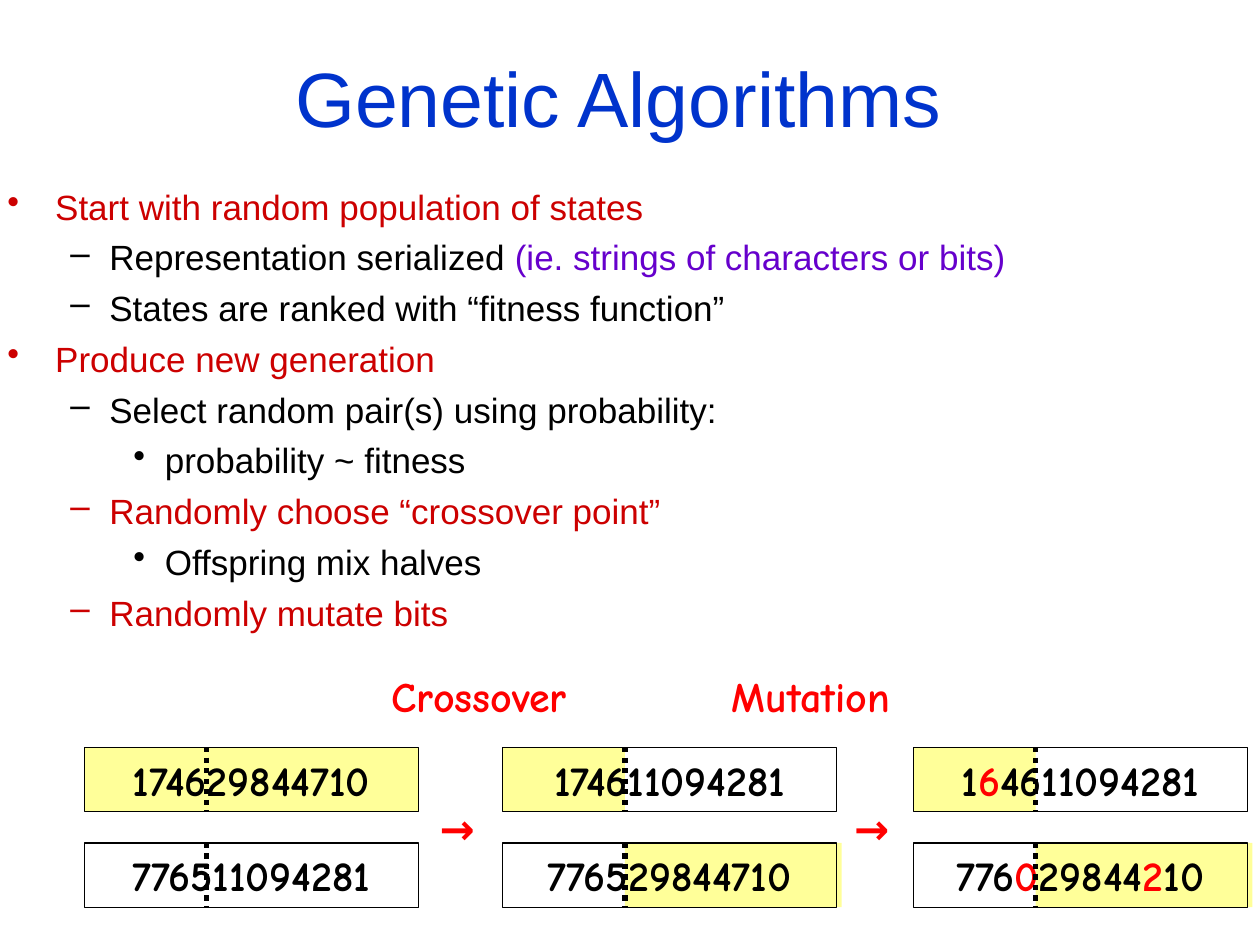
from dataclasses import dataclass
from lxml.etree import SubElement
from pptx import Presentation
from pptx.dml.color import RGBColor
from pptx.enum.dml import MSO_LINE
from pptx.enum.shapes import MSO_CONNECTOR, MSO_SHAPE
from pptx.enum.text import MSO_ANCHOR, PP_ALIGN
from pptx.oxml import parse_xml
from pptx.oxml.ns import nsdecls, qn
from pptx.util import Inches, Pt

BLACK, RED, CRIMSON = "000000", "FF0000", "CC0000"
BLUE, PURPLE, YELLOW = "0033CC", "6600CC", "FFFF99"
COLS = (0.67, 3.99, 7.25)
ROWS = (5.93, 6.69)
WIDE, HIGH, CUT, TAIL = 2.65, 0.51, 0.97, 1.72
LEVELS = ((0.38, -0.38, "•"), (0.81, -0.31, "–"), (1.25, -0.25, "•"))


@dataclass
class Style:
    """Look of a paragraph; parts split by | alternate color and accent."""
    size: int
    face: str
    color: str
    accent: str = RED
    bold: bool = False


@dataclass
class Point:
    """One line of the bullet list."""
    level: int
    text: str
    color: str = BLACK


@dataclass
class Gene:
    """One serialized state at a grid cell, with its yellow span."""
    col: int
    row: int
    text: str
    start: float = 0
    span: float = 0


@dataclass
class Label:
    """A red caption or arrow at a place."""
    left: float
    top: float
    width: float
    text: str


POINTS = (
    Point(0, "Start with random population of states", CRIMSON),
    Point(1, "Representation serialized |(ie. strings of characters or bits)"),
    Point(1, "States are ranked with “fitness function”"),
    Point(0, "Produce new generation", CRIMSON),
    Point(1, "Select random pair(s) using probability:"),
    Point(2, "probability ~ fitness"),
    Point(1, "Randomly choose “crossover point”", CRIMSON),
    Point(2, "Offspring mix halves"),
    Point(1, "Randomly mutate bits", CRIMSON),
)
GENES = (
    Gene(0, 0, "174629844710", 0, WIDE),
    Gene(0, 1, "776511094281"),
    Gene(1, 0, "174611094281", 0, CUT),
    Gene(1, 1, "776529844710", CUT, TAIL),
    Gene(2, 0, "1|6|4611094281", 0, CUT),
    Gene(2, 1, "776|0|29844|2|10", CUT, TAIL),
)
LABELS = (
    Label(3.01, 5.27, 1.6, "Crossover"),
    Label(5.71, 5.27, 1.5, "Mutation"),
    Label(3.39, 6.32, 0.53, "→"),
    Label(6.68, 6.32, 0.53, "→"),
)


def paint(target, color: str) -> None:
    """Set a font, fill or line color from a hex string."""
    target.rgb = RGBColor.from_string(color)


def write(para, text: str, style: Style) -> None:
    """Fill a paragraph with styled text."""
    font = para.font
    font.size, font.name, font.bold = Pt(style.size), style.face, style.bold
    parts = text.split("|")
    if len(parts) == 1:
        paint(font.color, style.color)
    for num, part in enumerate(parts):
        run = para.add_run()
        run.text = part
        if len(parts) > 1:
            paint(run.font.color, style.accent if num % 2 else style.color)


def add_box(slide, left: float, top: float, width: float, high: float):
    """Add a text box and return its frame."""
    box = slide.shapes.add_textbox(*map(Inches, (left, top, width, high)))
    return box.text_frame


def add_rect(slide, left: float, top: float, width: float):
    """Add a plain rectangle of gene height."""
    rect = slide.shapes.add_shape(
        MSO_SHAPE.RECTANGLE, *map(Inches, (left, top, width, HIGH)))
    rect.shadow.inherit = False
    return rect


def add_cut(slide, left: float, top: float) -> None:
    """Draw the dotted crossover point."""
    line = slide.shapes.add_connector(
        MSO_CONNECTOR.STRAIGHT, *map(Inches, (left, top, left, top + HIGH)))
    paint(line.line.color, BLACK)
    line.line.width = Pt(3)
    line.line.dash_style = MSO_LINE.ROUND_DOT
    SubElement(line._element.spPr, qn("a:effectLst"))


def add_gene(slide, gene: Gene) -> None:
    """Draw a gene with its yellow span, frame, digits and cut."""
    left, top = COLS[gene.col], ROWS[gene.row]
    if gene.span:
        band = add_rect(slide, left + gene.start, top, gene.span)
        band.fill.solid()
        paint(band.fill.fore_color, YELLOW)
        band.line.fill.background()
    rect = add_rect(slide, left, top, WIDE)
    rect.fill.background()
    paint(rect.line.color, BLACK)
    rect.line.width = Pt(0.75)
    frame = rect.text_frame
    frame.word_wrap = False
    frame.vertical_anchor = MSO_ANCHOR.MIDDLE
    para = frame.paragraphs[0]
    para.alignment = PP_ALIGN.CENTER
    write(para, gene.text, Style(24, "Comic Neue", BLACK, bold=True))
    add_cut(slide, left + CUT, top)


def add_point(para, point: Point) -> None:
    """Write one bulleted line."""
    left, hang, mark = LEVELS[point.level]
    para.level = point.level
    props = para._p.get_or_add_pPr()
    props.set("marL", str(Inches(left)))
    props.set("indent", str(Inches(hang)))
    props.insert(0, parse_xml(f'<a:buChar {nsdecls("a")} char="{mark}"/>'))
    para.space_before = Pt(5)
    write(para, point.text, Style(20, "Arial", point.color, PURPLE))


def add_title(slide) -> None:
    """Write the slide title."""
    frame = add_box(slide, 0.5, 0.3, 8.82, 0.94)
    frame.word_wrap = True
    frame.vertical_anchor = MSO_ANCHOR.MIDDLE
    frame.paragraphs[0].alignment = PP_ALIGN.CENTER
    write(frame.paragraphs[0], "Genetic Algorithms", Style(44, "Arial", BLUE))


def add_list(slide) -> None:
    """Write the bullet list."""
    frame = add_box(slide, -0.04, 1.42, 10, 3.08)
    frame.word_wrap = True
    for num, point in enumerate(POINTS):
        add_point(frame.add_paragraph() if num else frame.paragraphs[0], point)


def add_label(slide, label: Label) -> None:
    """Write a caption or arrow."""
    frame = add_box(slide, label.left, label.top, label.width, 0.5)
    frame.word_wrap = False
    write(frame.paragraphs[0], label.text,
          Style(24, "Comic Neue", RED, bold=True))


def main() -> None:
    """Build and save the slide."""
    deck = Presentation()
    deck.slide_width, deck.slide_height = Inches(10), Inches(7.5)
    slide = deck.slides.add_slide(deck.slide_layouts[6])
    add_title(slide)
    add_list(slide)
    for gene in GENES:
        add_gene(slide, gene)
    for label in LABELS:
        add_label(slide, label)
    deck.save("out.pptx")


if __name__ == "__main__":
    main()
